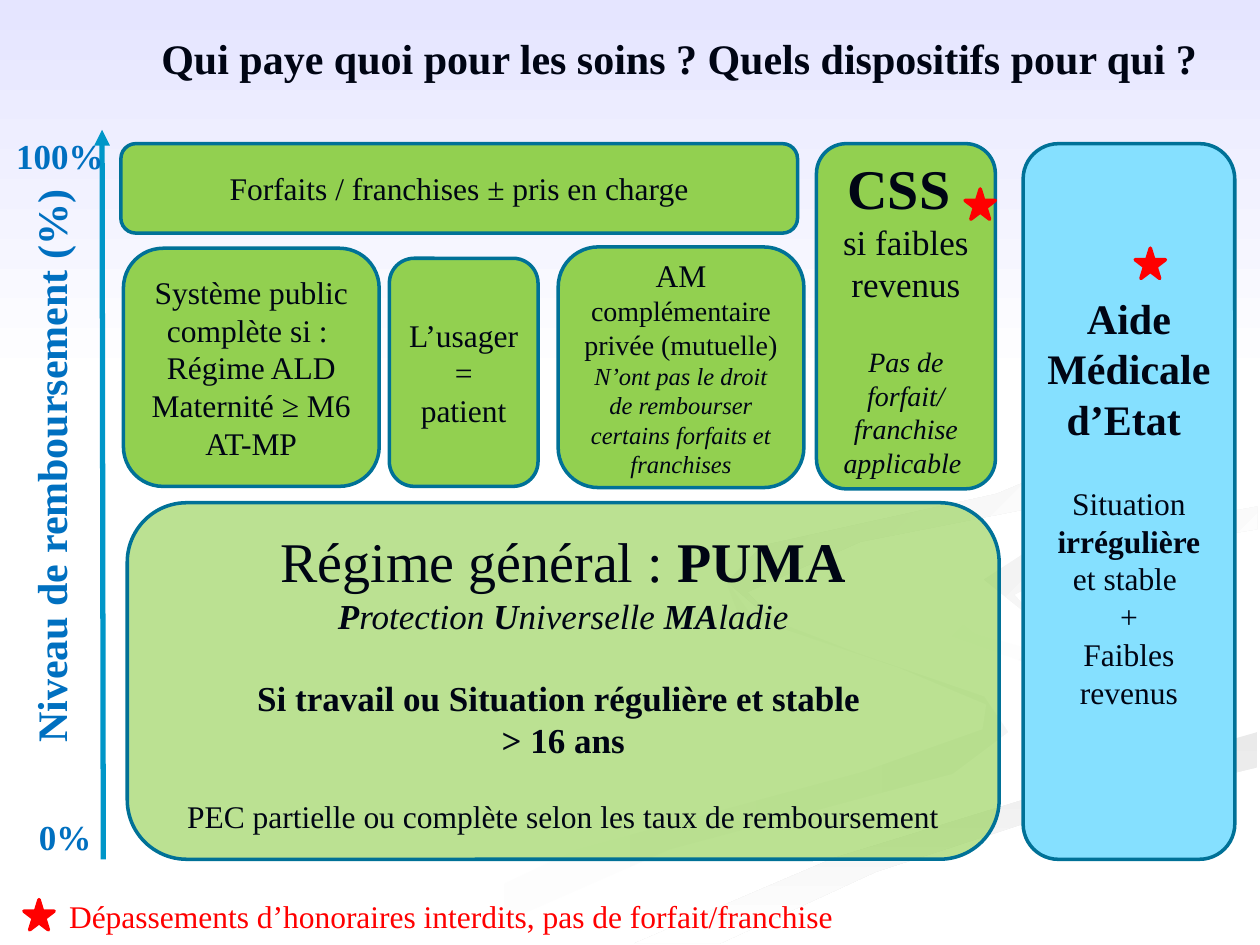
from pptx import Presentation
from pptx import util as u
from pptx.dml.color import RGBColor
from pptx.enum import shapes, text
from pptx.oxml import parse_xml
from pptx.oxml.ns import nsdecls, qn
from lxml import etree

PX = 9144
FONT = "Times New Roman"
COLORS = {
    "ink": "000514", "green": "92D050", "cyan": "85E0FF", "border": "007197",
    "axis": "0096C8", "label": "0070C0", "red": "FF0000", "white": "FFFFFF",
    "sky": "E5E5FF", "pale": "F5F5F5", "shade": "EAEAEA", "mist": "F1F1F1", "haze": "EDEDED",
}
STYLES = {"": {}, "b": {"bold": True}, "i": {"italic": True}, "bi": {"bold": True, "italic": True}}
BANDS = [
    ("white", "pale", 0, [
        (781, 553), (682, 519), (594, 485), (575, 459), (586, 487), (714, 530), (783, 559),
        (780, 579), (684, 613), (458, 674), (300, 749), (361, 749), (532, 674), (756, 614),
        (800, 581)]),
    ("white", "pale", 45, [
        (943, 570), (905, 540), (774, 503), (724, 464), (755, 505), (880, 549), (918, 581),
        (894, 605)]),
    ("shade", "white", 90, [
        (503, 749), (571, 749), (695, 692), (821, 651), (998, 609), (998, 581), (831, 629),
        (662, 681)]),
    ("mist", "white", 45, [
        (781, 460), (826, 496), (805, 472), (859, 443), (998, 420), (998, 402), (821, 434)]),
    ("haze", "white", 45, [
        (683, 430), (825, 402), (889, 362), (886, 316), (762, 233), (876, 306), (882, 354),
        (791, 392), (605, 433), (577, 462), (622, 500), (593, 470)]),
]


def color(name):
    return RGBColor.from_string(COLORS[name])


def bounds(left, top, width, height):
    return [value * PX for value in (left, top, width, height)]


def apply_format(target, values):
    for name, value in values.items():
        setattr(target, name, value)


def write_runs(paragraph, runs, ink="ink"):
    for words, size, style in runs:
        run = paragraph.add_run()
        run.text = words
        apply_format(run.font, {"name": FONT, "size": u.Pt(size), **STYLES[style]})
        run.font.color.rgb = color(ink)


def write_paragraphs(frame, paragraphs):
    apply_format(frame, {"word_wrap": True, "vertical_anchor": text.MSO_ANCHOR.MIDDLE})
    for index, (gap, runs) in enumerate(paragraphs):
        paragraph = frame.paragraphs[0] if index == 0 else frame.add_paragraph()
        apply_format(paragraph, {"alignment": text.PP_ALIGN.CENTER, "space_before": u.Pt(gap)})
        write_runs(paragraph, runs)


def gradient(shape, start, end, angle):
    shape.fill.gradient()
    shape.fill.gradient_angle = (360 - angle) % 360
    for stop, name in zip(shape.fill.gradient_stops, (start, end)):
        stop.color.rgb = color(name)
    shape.line.fill.background()
    shape.shadow.inherit = False


def preset(slide, kind, box, fill, line):
    shape = slide.shapes.add_shape(kind, *bounds(*box))
    shape.shadow.inherit = False
    shape.fill.solid()
    shape.fill.fore_color.rgb = color(fill)
    shape.line.color.rgb = color(line)
    shape.line.width = u.Pt(2)
    return shape


def card(slide, box, paragraphs, fill="green"):
    shape = preset(slide, shapes.MSO_SHAPE.ROUNDED_RECTANGLE, box, fill, "border")
    write_paragraphs(shape.text_frame, paragraphs)
    return shape


def star(slide, left, top):
    preset(slide, shapes.MSO_SHAPE.STAR_5_POINT, (left, top, 24, 24), "red", "red")


def label(slide, box, words, size, style, ink):
    frame = slide.shapes.add_textbox(*bounds(*box)).text_frame
    frame.word_wrap = True
    write_runs(frame.paragraphs[0], [(words, size, style)], ink)
    return frame


def backdrop(slide, box):
    left, top, width, height = box
    for start, end, angle, points in BANDS:
        builder = slide.shapes.build_freeform(*points[0], scale=PX)
        builder.add_line_segments(points[1:], close=True)
        gradient(builder.convert_to_shape(left * PX, top * PX), start, end, angle)
    sky = slide.shapes.add_shape(shapes.MSO_SHAPE.RECTANGLE, *bounds(left, top, width, 308))
    gradient(sky, "sky", "white", 90)


def heading(slide, box):
    title = slide.shapes.title
    title.element.getparent().append(title.element)
    apply_format(title, dict(zip(("left", "top", "width", "height"), bounds(*box))))
    frame = title.text_frame
    apply_format(frame, {"word_wrap": True, "auto_size": text.MSO_AUTO_SIZE.NONE,
                         "vertical_anchor": text.MSO_ANCHOR.TOP})
    frame.paragraphs[0].alignment = text.PP_ALIGN.LEFT
    write_runs(frame.paragraphs[0],
               [("Qui paye quoi pour les soins ? Quels dispositifs pour qui ?", 24, "b")])


def reimbursement_axis(slide, box):
    left, top, width, height = box
    arrow = slide.shapes.add_connector(
        shapes.MSO_CONNECTOR.STRAIGHT, (left + 79) * PX, (top + height) * PX,
        (left + 78) * PX, (top + 37) * PX)
    arrow.line.color.rgb = color("axis")
    arrow.line.width = u.Pt(3)
    arrow.line._get_or_add_ln().append(parse_xml(f'<a:tailEnd {nsdecls("a")} type="triangle"/>'))
    etree.SubElement(arrow.element.spPr, qn("a:effectLst"))
    caption = label(slide, (left + 12, top, 61, 608), "Niveau de remboursement (%)", 24, "b", "label")
    caption.paragraphs[0].alignment = text.PP_ALIGN.CENTER
    caption._txBody.bodyPr.set("vert", "vert270")
    label(slide, (left, top + 36, width, 44), "100%", 20, "b", "label")
    label(slide, (left + 18, top + 576, 66, 44), "0%", 20, "b", "label")


def coverage(slide, box):
    left, top, width, height = box
    base = card(slide, (left + 5, top + 285, width - 5, height - 285), [
        (0, [("Régime général : ", 32, ""), ("PUMA", 32, "b")]),
        (0, [("P", 20, "bi"), ("rotection ", 20, "i"), ("U", 20, "bi"),
             ("niverselle ", 20, "i"), ("MA", 20, "bi"), ("ladie", 20, "i")]),
        (23, [("Si travail ou Situation régulière et stable ", 20, "b")]),
        (0, [("> 16 ans", 20, "b")]),
        (21, [("PEC partielle ou complète selon les taux de remboursement", 18, "")])])
    tint = base.element.spPr.find(qn("a:solidFill"))[0]
    etree.SubElement(tint, qn("a:alpha")).set("val", "62000")
    card(slide, (left, top, 537, 71), [(0, [("Forfaits / franchises ± pris en charge", 18, "")])])
    card(slide, (left + 2, top + 83, 203, 189), [
        (0, [(words, 18, "")]) for words in
        ("Système public complète si : ", "Régime ALD", "Maternité ≥ M6", "AT-MP")])
    card(slide, (left + 213, top + 91, 118, 181), [
        (0, [("L’usager", 18, "")]), (0, [("= patient", 18, "")])])
    card(slide, (left + 347, top + 82, 195, 191), [
        (0, [("AM ", 18, ""), ("complémentaire privée (mutuelle)", 16, "")]),
        (0, [("N’ont pas le droit de rembourser certains forfaits et franchises", 14, "i")])])
    card(slide, (left + 552, top, 142, 274), [
        (0, [("CSS ", 32, "b")]), (0, [("si faibles revenus", 20, "")]),
        (23, [("Pas de forfait/", 16, "i")]), (0, [("franchise applicable ", 16, "i")])])
    star(slide, left + 670, top + 36)


def state_aid(slide, box):
    card(slide, box, [
        (0, [("Aide Médicale d’Etat ", 24, "b")]),
        (23, [("Situation ", 18, ""), ("irrégulière", 18, "b"), (" et stable ", 18, "")]),
        (0, [("+", 18, "")]), (0, [("Faibles revenus", 18, "")])], "cyan")
    star(slide, box[0] + 89, box[1] + 83)


def legend(slide, box):
    left, top, width, height = box
    star(slide, left, top + 7)
    label(slide, (left + 26, top, width - 26, height),
          "Dépassements d’honoraires interdits, pas de forfait/franchise", 18, "", "red")


def main():
    presentation = Presentation()
    apply_format(presentation, {"slide_width": 1000 * PX, "slide_height": 750 * PX})
    slide = presentation.slides.add_slide(presentation.slide_layouts[5])
    backdrop(slide, (0, 0, 1000, 750))
    heading(slide, (118, 21, 847, 51))
    reimbursement_axis(slide, (3, 66, 102, 616))
    coverage(slide, (96, 114, 697, 568))
    state_aid(slide, (812, 114, 168, 568))
    legend(slide, (19, 707, 869, 40))
    presentation.save("out.pptx")


if __name__ == "__main__":
    main()
